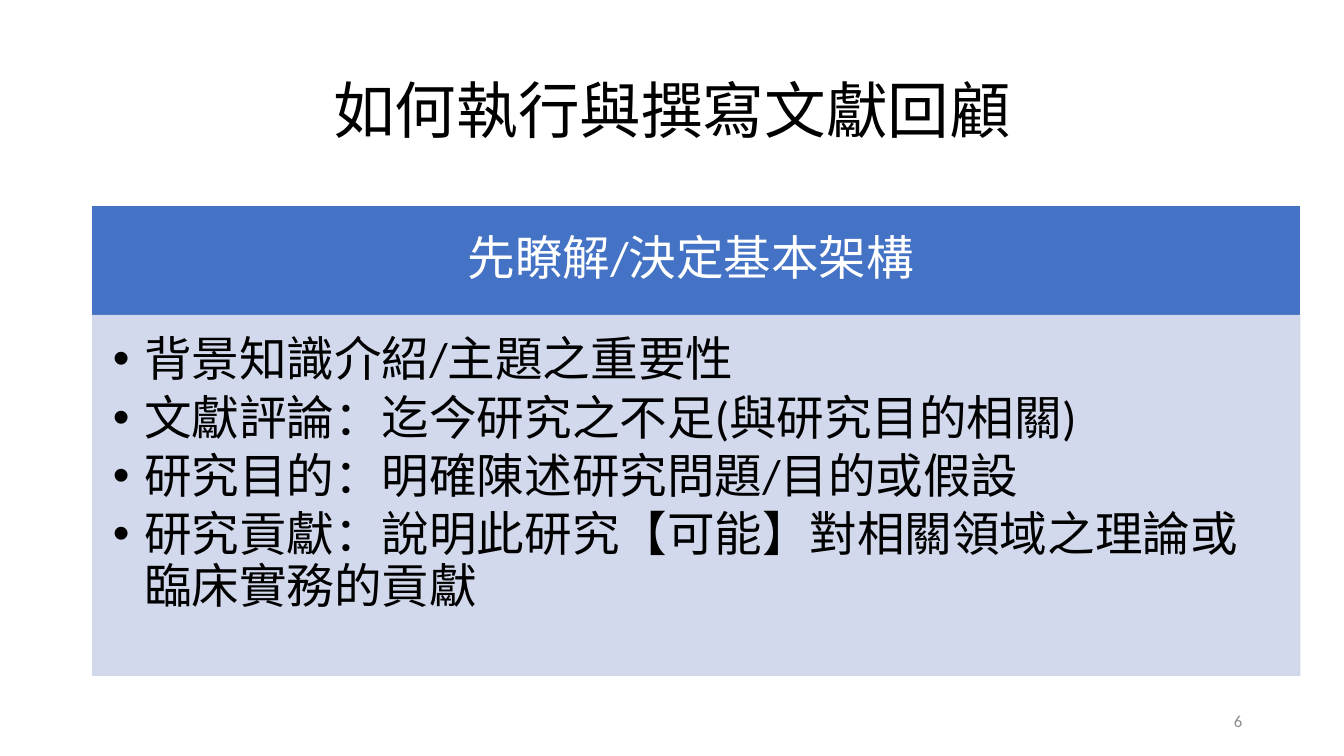
from lxml.etree import SubElement
from pptx import Presentation
from pptx.dml.color import RGBColor
from pptx.enum.shapes import MSO_SHAPE as SHAPE
from pptx.enum.text import MSO_ANCHOR as ANCHOR, MSO_AUTO_SIZE as AUTO_SIZE, PP_ALIGN as ALIGN
from pptx.oxml.ns import qn
from pptx.util import Inches, Pt

COLORS = {"black": "000000", "white": "FFFFFF", "blue": "4472C4",
          "pale": "CFD5EA", "gray": "8C8C8C"}
POINTS = [
    "背景知識介紹/主題之重要性",
    "文獻評論：迄今研究之不足(與研究目的相關)",
    "研究目的：明確陳述研究問題/目的或假設",
    "研究貢獻：說明此研究【可能】對相關領域之理論或臨床實務的貢獻",
]


def write(frame, lines, size=34, color="black", align=ALIGN.LEFT, anchor=ANCHOR.MIDDLE,
          insets=(0.1, 0.05, 0.1, 0.05), spacing=0.9, after=0, bullet=False):
    frame.word_wrap = True
    frame.auto_size = AUTO_SIZE.NONE
    frame.vertical_anchor = anchor
    (frame.margin_left, frame.margin_top,
     frame.margin_right, frame.margin_bottom) = map(Inches, insets)
    for index, line in enumerate(lines):
        para = frame.add_paragraph() if index else frame.paragraphs[0]
        para.alignment = align
        para.line_spacing = spacing
        para.space_before = Pt(0)
        para.space_after = Pt(after)
        span = para.add_run()
        span.text = line
        span.font.name = "Calibri"
        span.font.size = Pt(size)
        span.font.color.rgb = RGBColor.from_string(COLORS[color])
        if bullet:
            props = para._p.get_or_add_pPr()
            props.set("marL", str(Inches(0.31)))
            props.set("indent", str(-Inches(0.31)))
            SubElement(props, qn("a:buFont"), typeface="Arial")
            SubElement(props, qn("a:buChar"), char="•")


def add_panel(top, height, color, opacity=100):
    box = page.shapes.add_shape(SHAPE.RECTANGLE, Inches(0.92), Inches(top),
                                Inches(11.97), Inches(height))
    box.shadow.inherit = False
    box.fill.solid()
    box.line.width = Pt(1)
    for paint in (box.fill.fore_color, box.line.color):
        paint.rgb = RGBColor.from_string(COLORS[color])
    if opacity < 100:
        for value in box._element.spPr.iter(qn("a:srgbClr")):
            SubElement(value, qn("a:alpha"), val=str(opacity * 1000))
    return box


deck = Presentation()
deck.slide_width, deck.slide_height = Inches(13.33), Inches(7.5)
page = deck.slides.add_slide(deck.slide_layouts[5])

# Title
title = page.shapes.title
title.left, title.top = Inches(0.92), Inches(0.4)
title.width, title.height = Inches(11.5), Inches(1.45)
write(title.text_frame, ["如何執行與撰寫文獻回顧"], size=44, align=ALIGN.CENTER)

# Heading band
heading = add_panel(2.05, 1.07, "blue")
write(heading.text_frame, ["先瞭解/決定基本架構 "], color="white", align=ALIGN.CENTER,
      insets=(0.26, 0.15, 0.26, 0.15))

# Bulleted panel
body = add_panel(3.13, 3.57, "pale", opacity=90)
write(body.text_frame, POINTS, anchor=ANCHOR.TOP, insets=(0.2, 0.2, 0.26, 0.3),
      after=5, bullet=True)

# Page number
number = page.shapes.add_textbox(Inches(9.42), Inches(6.95), Inches(3), Inches(0.4))
write(number.text_frame, ["6"], size=12, color="gray", align=ALIGN.RIGHT, spacing=1.0)

deck.save("out.pptx")
